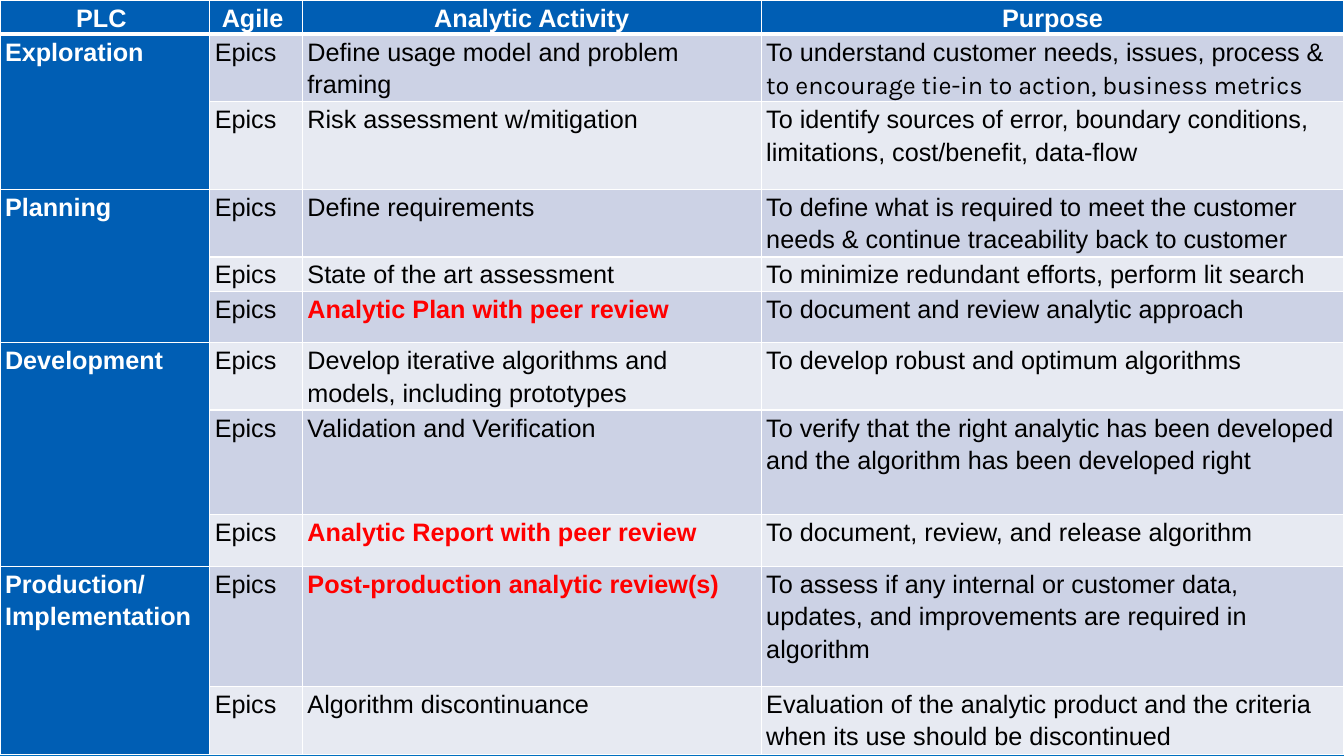
from lxml import etree
from pptx import Presentation
from pptx.dml.color import RGBColor
from pptx.enum import text as t
from pptx.oxml import ns
from pptx.util import Inches, Pt

WHITE = RGBColor(0xFF, 0xFF, 0xFF)
BLACK = RGBColor(0x00, 0x00, 0x00)
RED = RGBColor(0xFF, 0x00, 0x00)
BLUE = RGBColor(0x00, 0x5E, 0xB4)
BAND_DARK = RGBColor(0xCC, 0xD2, 0xE5)
BAND_LIGHT = RGBColor(0xE7, 0xEA, 0xF2)
SKY = RGBColor(0x00, 0x70, 0xC0)
NAVY = RGBColor(0x00, 0x20, 0x60)

HEADINGS = ["PLC ", "Agile ", "Analytic Activity", "Purpose"]
COLUMN_WIDTHS = [2.08, 0.92, 4.55, 5.78]
HEADING_HEIGHT = 0.34

# Phase, then its activities: row height, activity, purpose
PHASES = [
    ("Exploration", [
        (0.67, "Define usage model and problem framing",
         "To understand customer needs, issues, process &\n"
         "to encourage tie-in to action, business metrics"),
        (0.87, "Risk assessment w/mitigation",
         "To identify sources of error, boundary conditions, limitations, "
         "cost/benefit, data-flow"),
    ]),
    ("Planning", [
        (0.67, "Define requirements",
         "To define what is required to meet the customer needs & "
         "continue traceability back to customer"),
        (0.34, "State of the art assessment",
         "To minimize redundant efforts, perform lit search"),
        (0.51, "Analytic Plan with peer review",
         "To document and review analytic approach"),
    ]),
    ("Development", [
        (0.67, "Develop iterative algorithms and models, including prototypes",
         "To develop robust and optimum algorithms"),
        (1.04, "Validation and Verification",
         "To verify that the right analytic has been developed "
         "and the algorithm has been developed right"),
        (0.51, "Analytic Report with peer review",
         "To document, review, and release algorithm"),
    ]),
    ("Production/\nImplementation", [
        (1.19, "Post-production analytic review(s)",
         "To assess if any internal or customer data, updates, and "
         "improvements are required in algorithm"),
        (0.68, "Algorithm discontinuance",
         "Evaluation of the analytic product and the criteria "
         "when its use should be discontinued"),
    ]),
]


def write(frame, words, color=BLACK, bold=False, align=t.PP_ALIGN.LEFT,
          fonts=("Arial",)):
    """Write one paragraph per line; the last font serves any further lines."""
    for i, line in enumerate(words.split("\n")):
        paragraph = frame.paragraphs[0] if i == 0 else frame.add_paragraph()
        paragraph.alignment = align
        paragraph.line_spacing = 1.15
        run = paragraph.add_run()
        run.text = line
        run.font.name = fonts[min(i, len(fonts) - 1)]
        run.font.size = Pt(18)
        run.font.bold = bold
        run.font.color.rgb = color


def style_cell(cell, fill, bottom=1):
    cell.margin_left = cell.margin_right = Inches(0.05)
    cell.margin_top = cell.margin_bottom = 0
    properties = cell._tc.get_or_add_tcPr()
    for side, points in (("L", 1), ("R", 1), ("T", 1), ("B", bottom)):
        border = etree.SubElement(properties, ns.qn(f"a:ln{side}"),
                                  w=str(Pt(points)))
        solid = etree.SubElement(border, ns.qn("a:solidFill"))
        etree.SubElement(solid, ns.qn("a:srgbClr"), val=str(WHITE))
    cell.fill.solid()
    cell.fill.fore_color.rgb = fill


def fill_headings(table):
    for column, heading in enumerate(HEADINGS):
        cell = table.cell(0, column)
        style_cell(cell, BLUE, bottom=3)
        write(cell.text_frame, heading, color=WHITE, bold=True,
              align=t.PP_ALIGN.CENTER)


def fill_phase(table, first, phase, activities):
    last = first + len(activities) - 1
    for row, (_, activity, purpose) in enumerate(activities, first):
        style_cell(table.cell(row, 0), BLUE)
        reviewed = "review" in activity
        fonts = ("Arial", "Karla") if "\n" in purpose else ("Arial",)
        formats = [("Epics", {}),
                   (activity, {"color": RED if reviewed else BLACK,
                               "bold": reviewed}),
                   (purpose, {"fonts": fonts})]
        for column, (words, style) in enumerate(formats, 1):
            cell = table.cell(row, column)
            style_cell(cell, BAND_DARK if row % 2 else BAND_LIGHT)
            write(cell.text_frame, words, **style)
    phase_cell = table.cell(first, 0)
    phase_cell.merge(table.cell(last, 0))
    write(phase_cell.text_frame, phase, color=WHITE, bold=True)
    return last + 1


def add_activity_table(slide, left, top):
    heights = [HEADING_HEIGHT] + [activity[0] for _, activities in PHASES
                                  for activity in activities]
    table = slide.shapes.add_table(
        len(heights), len(HEADINGS), Inches(left), Inches(top),
        Inches(sum(COLUMN_WIDTHS)), Inches(sum(heights))).table
    for column, width in zip(table.columns, COLUMN_WIDTHS):
        column.width = Inches(width)
    for row, height in zip(table.rows, heights):
        row.height = Inches(height)

    fill_headings(table)
    next_row = 1
    for phase, activities in PHASES:
        next_row = fill_phase(table, next_row, phase, activities)


def paint_background(slide):
    fill = slide.background.fill
    fill.gradient()
    fill.gradient_angle = 90
    for stop, position, color in zip(fill.gradient_stops, (0.05, 1),
                                     (SKY, NAVY)):
        stop.position = position
        stop.color.rgb = color


def main():
    deck = Presentation()
    deck.slide_width, deck.slide_height = Inches(13.33), Inches(7.5)
    slide = deck.slides.add_slide(deck.slide_layouts[6])
    paint_background(slide)
    add_activity_table(slide, 0, 0)
    deck.save("out.pptx")


if __name__ == "__main__":
    main()
